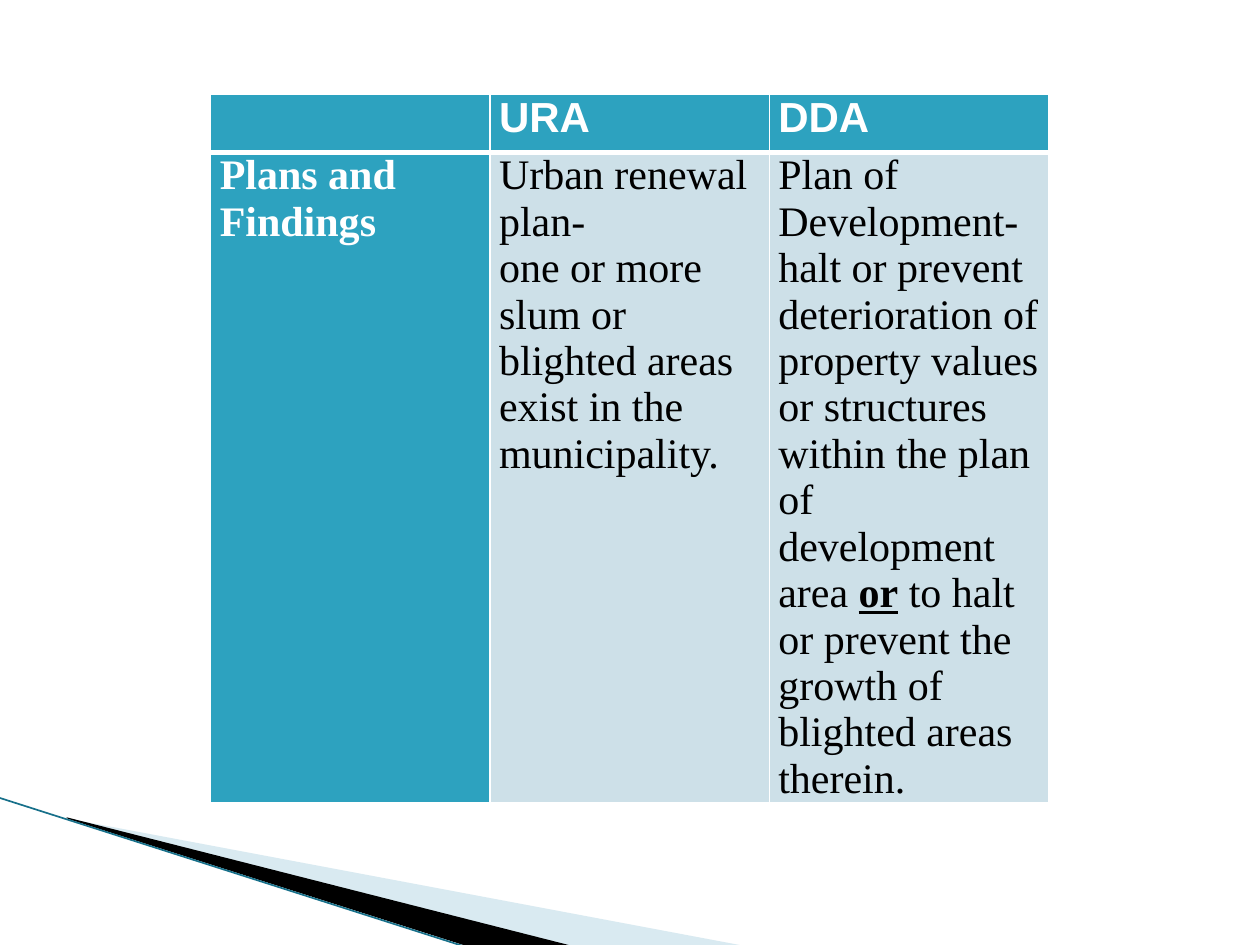
from typing import NamedTuple

from lxml import etree
from pptx import Presentation
from pptx.dml.color import RGBColor
from pptx.enum import shapes as kinds
from pptx.oxml import ns
from pptx.util import Pt

WHITE, BLACK, TEAL, PALE = "FFFFFF", "000000", "2DA2BF", "CDE0E8"
SERIF = "Times New Roman"


class Wedge(NamedTuple):
    points: list
    color: str
    alpha: int = 100


class Run(NamedTuple):
    text: str
    bold: bool = False
    under: bool = False


class Cell(NamedTuple):
    paras: list
    fill: str
    color: str = WHITE
    font: str = SERIF


WEDGES = [
    Wedge([(39.6, 468.4), (428.4, 540.7), (328.3, 540.7), (39.6, 468)], "A0CBDC", 40),
    Wedge([(38.2, 467.3), (329, 540.7), (267.8, 541.4), (38.9, 468)], BLACK),
]
ROWS = [
    [
        Cell([], TEAL),
        Cell([[Run("URA", True)]], TEAL, font="Arial"),
        Cell([[Run("DDA", True)]], TEAL, font="Arial"),
    ],
    [
        Cell([[Run("Plans and Findings", True)]], TEAL),
        Cell([
            [Run("Urban renewal plan-")],
            [Run("one or more slum or blighted areas exist in the municipality.")],
        ], PALE, BLACK),
        Cell([
            [Run("Plan of Development-")],
            [Run("halt or prevent deterioration of property values or structures "
                 "within the plan of development area "),
             Run("or", True, True),
             Run(" to halt or prevent the growth of blighted areas therein.")],
        ], PALE, BLACK),
    ],
]


def paint(fill, color: str) -> None:
    fill.solid()
    fill.fore_color.rgb = RGBColor.from_string(color)


def add_text(para, text: str, *, font: str, color: str, size: float = 24,
             bold: bool = False, under: bool = False) -> None:
    run = para.add_run()
    run.text = text
    face = run.font
    face.name, face.size, face.bold, face.underline = font, Pt(size), bold, under
    paint(face.fill, color)


def add_wedge(slide, wedge: Wedge) -> None:
    first, *rest = wedge.points
    pen = slide.shapes.build_freeform(*first, scale=Pt(1))
    pen.add_line_segments(rest, close=True)
    shape = pen.convert_to_shape()
    shape.shadow.inherit = False
    shape.line.fill.background()
    paint(shape.fill, wedge.color)
    if wedge.alpha < 100:
        tint = shape.fill._xPr.find(".//" + ns.qn("a:srgbClr"))
        etree.SubElement(tint, ns.qn("a:alpha"), val=str(wedge.alpha * 1000))


def add_edges(cell, top: float, bottom: float) -> None:
    props = cell._tc.get_or_add_tcPr()
    for side, width in zip("LRTB", (1, 1, top, bottom)):
        edge = etree.SubElement(props, ns.qn(f"a:ln{side}"), w=str(Pt(width)))
        fill = etree.SubElement(edge, ns.qn("a:solidFill"))
        etree.SubElement(fill, ns.qn("a:srgbClr"), val=WHITE)


def fill_cell(cell, data: Cell, top: float, bottom: float) -> None:
    add_edges(cell, top, bottom)
    paint(cell.fill, data.fill)
    cell.margin_left = cell.margin_right = Pt(5.2)
    cell.margin_top = cell.margin_bottom = 0
    frame = cell.text_frame
    for i, runs in enumerate(data.paras):
        para = frame.add_paragraph() if i else frame.paragraphs[0]
        for run in runs:
            add_text(para, run.text, font=data.font, color=data.color,
                     bold=run.bold, under=run.under)


def main() -> None:
    deck = Presentation()
    deck.slide_width, deck.slide_height = Pt(720), Pt(540)
    slide = deck.slides.add_slide(deck.slide_layouts[6])

    # Corner wedges and their edge line
    for wedge in WEDGES:
        add_wedge(slide, wedge)
    line = slide.shapes.add_connector(kinds.MSO_CONNECTOR.STRAIGHT,
                                      Pt(-0.7), Pt(455.8), Pt(267.1), Pt(541.4))
    line.line.width = Pt(0.95)
    paint(line.line.fill, "17708A")
    etree.SubElement(line._element.spPr, ns.qn("a:effectLst"))

    # Comparison table
    heights = (33.1, 366.5)
    table = slide.shapes.add_table(2, 3, Pt(120.4), Pt(54), Pt(478.8),
                                   Pt(sum(heights))).table
    table.horz_banding = False
    for col in table.columns:
        col.width = Pt(159.6)
    for r, (row, height) in enumerate(zip(ROWS, heights)):
        table.rows[r].height = Pt(height)
        top, bottom = (3, 1) if r else (1, 3)
        for c, data in enumerate(row):
            fill_cell(table.cell(r, c), data, top, bottom)

    deck.save("out.pptx")


if __name__ == "__main__":
    main()
